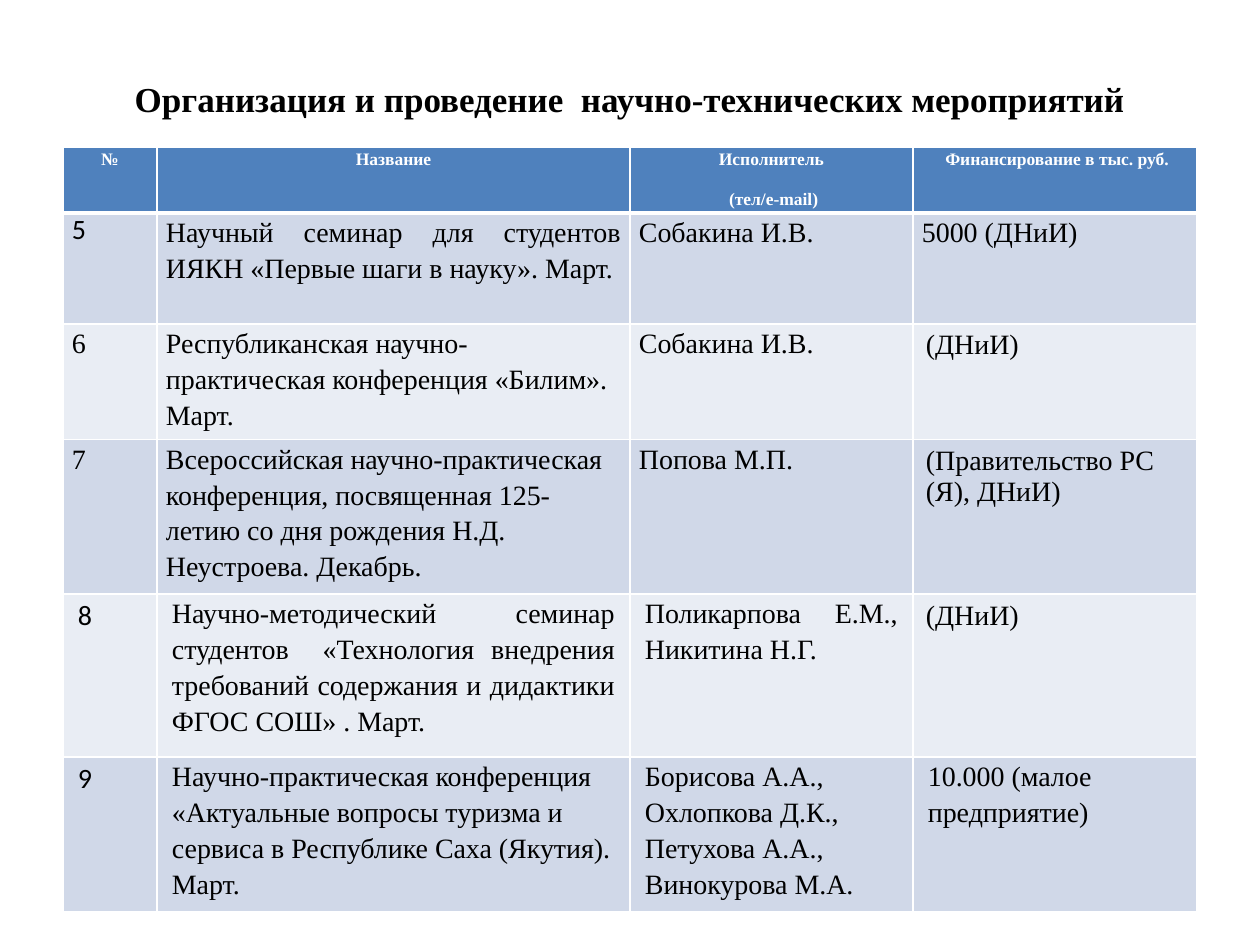
import dataclasses
import typing

import lxml.etree
import pptx
import pptx.dml.color
import pptx.enum.text
import pptx.oxml.ns
import pptx.util

SCALE = 914400 / 126
SERIF, SANS = "Times New Roman", "Calibri"
HEAD_FILL, ODD_FILL, EVEN_FILL = "4F81BD", "D0D8E8", "E9EDF4"
ALIGN = pptx.enum.text.PP_ALIGN
ANCHOR = pptx.enum.text.MSO_ANCHOR


@dataclasses.dataclass
class Style:
    """Cell text format; lengths in px, sizes in points."""
    inset: tuple[int, int] = (9, 0)
    align: typing.Any = ALIGN.LEFT
    spacing: float = 1.15
    after: int = 0
    font: str = SERIF
    size: int = 16
    color: str = "000000"
    bold: bool = False
    indent: tuple[int, int] = (0, 0)


@dataclasses.dataclass
class Cell:
    text: str
    style: Style


def px(n: float) -> int:
    return round(n * SCALE)


def rgb(value: str) -> pptx.dml.color.RGBColor:
    return pptx.dml.color.RGBColor.from_string(value)


def set_attrs(obj: typing.Any, values: dict[str, typing.Any]) -> None:
    for name, value in values.items():
        setattr(obj, name, value)


def write_text(tf: typing.Any, text: str, st: Style) -> None:
    for i, line in enumerate(text.split("\n")):
        p = tf.add_paragraph() if i else tf.paragraphs[0]
        set_attrs(p, {"alignment": st.align, "line_spacing": st.spacing,
                      "space_after": pptx.util.Pt(st.after)})
        if any(st.indent):
            pPr = p._p.get_or_add_pPr()
            for name, value in zip(("marL", "indent"), st.indent):
                pPr.set(name, str(px(value)))
        r = p.add_run()
        r.text = line
        set_attrs(r.font, {"name": st.font, "size": pptx.util.Pt(st.size),
                           "bold": st.bold})
        r.font.color.rgb = rgb(st.color)


def add_border(cell: typing.Any, side: str, points: int) -> None:
    tcPr = cell._tc.get_or_add_tcPr()
    qn = pptx.oxml.ns.qn
    ln = lxml.etree.SubElement(tcPr, qn(f"a:ln{side}"),
                               w=str(pptx.util.Pt(points)))
    fill = lxml.etree.SubElement(ln, qn("a:solidFill"))
    lxml.etree.SubElement(fill, qn("a:srgbClr"), val="FFFFFF")


def draw_cell(cell: typing.Any, c: Cell, row: int) -> None:
    x, y = (px(n) for n in c.style.inset)
    set_attrs(cell, {"margin_left": x, "margin_right": x,
                     "margin_top": y, "margin_bottom": y})
    write_text(cell.text_frame, c.text, c.style)
    # The line under the header is thicker than the rest
    for side in "LRTB":
        thick = (row, side) in ((0, "B"), (1, "T"))
        add_border(cell, side, 3 if thick else 1)
    cell.fill.solid()
    band = ODD_FILL if row % 2 else EVEN_FILL
    cell.fill.fore_color.rgb = rgb(band if row else HEAD_FILL)


# Cell formats
HEAD = Style(inset=(15, 0), align=ALIGN.CENTER, after=10, size=10,
             color="FFFFFF", bold=True)
HEAD_TAB = dataclasses.replace(HEAD, indent=(0, 4))
TIGHT = Style()
TIGHT_J = Style(align=ALIGN.JUSTIFY)
NUM = Style(indent=(48, -48))
NUM_SANS = dataclasses.replace(NUM, spacing=1.0, font=SANS)
LOOSE = Style(inset=(15, 0), after=10)
LOOSE_J = dataclasses.replace(LOOSE, align=ALIGN.JUSTIFY)
LOOSE_SANS = dataclasses.replace(LOOSE, font=SANS)
PLAIN = Style(inset=(13, 6), spacing=1.0)

COLS = (94, 473, 283, 284)
ROW_HEIGHTS = (63, 111, 88, 149, 163, 149)
ROWS = [
    [Cell("№", HEAD), Cell("Название", HEAD),
     Cell("Исполнитель\n (тел/e-mail)", HEAD),
     Cell("Финансирование в тыс. руб.", HEAD_TAB)],
    [Cell("5", NUM_SANS),
     Cell("Научный семинар для студентов ИЯКН «Первые шаги в науку». Март.",
          TIGHT_J),
     Cell("Собакина И.В.", TIGHT), Cell("5000 (ДНиИ)", TIGHT)],
    [Cell("6", NUM),
     Cell("Республиканская научно-практическая конференция «Билим». Март.",
          TIGHT),
     Cell("Собакина И.В.", TIGHT), Cell("(ДНиИ)", PLAIN)],
    [Cell("7", NUM),
     Cell("Всероссийская научно-практическая конференция, посвященная "
          "125-летию со дня рождения Н.Д. Неустроева. Декабрь.", TIGHT),
     Cell("Попова М.П.", TIGHT), Cell("(Правительство РС (Я), ДНиИ)", PLAIN)],
    [Cell("8", LOOSE_SANS),
     Cell("Научно-методический семинар студентов  «Технология внедрения "
          "требований содержания и дидактики ФГОС СОШ» . Март.", LOOSE_J),
     Cell("Поликарпова Е.М., Никитина Н.Г.", LOOSE_J), Cell("(ДНиИ)", PLAIN)],
    [Cell("9", LOOSE_SANS),
     Cell("Научно-практическая конференция «Актуальные вопросы туризма и "
          "сервиса в Республике Саха (Якутия). Март.", LOOSE),
     Cell("Борисова А.А., Охлопкова Д.К., Петухова А.А., Винокурова М.А.",
          LOOSE),
     Cell("10.000 (малое предприятие)", LOOSE)],
]


def main() -> None:
    prs = pptx.Presentation()
    set_attrs(prs, {"slide_width": px(1260), "slide_height": px(945)})
    s = prs.slides.add_slide(prs.slide_layouts[6])

    # Title
    sp = s.shapes.add_textbox(px(63), px(38), px(1134), px(120))
    set_attrs(sp.text_frame, {"word_wrap": True,
                              "vertical_anchor": ANCHOR.MIDDLE})
    write_text(sp.text_frame,
               "Организация и проведение  научно-технических мероприятий",
               Style(align=ALIGN.CENTER, spacing=1.0, size=20, bold=True))

    # Table of events
    table = s.shapes.add_table(len(ROWS), len(COLS), px(63), px(147),
                               px(sum(COLS)), px(sum(ROW_HEIGHTS))).table
    for col, width in zip(table.columns, COLS):
        col.width = px(width)
    for i, (height, cells) in enumerate(zip(ROW_HEIGHTS, ROWS)):
        table.rows[i].height = px(height)
        for j, c in enumerate(cells):
            draw_cell(table.cell(i, j), c, i)

    prs.save("out.pptx")


if __name__ == "__main__":
    main()
